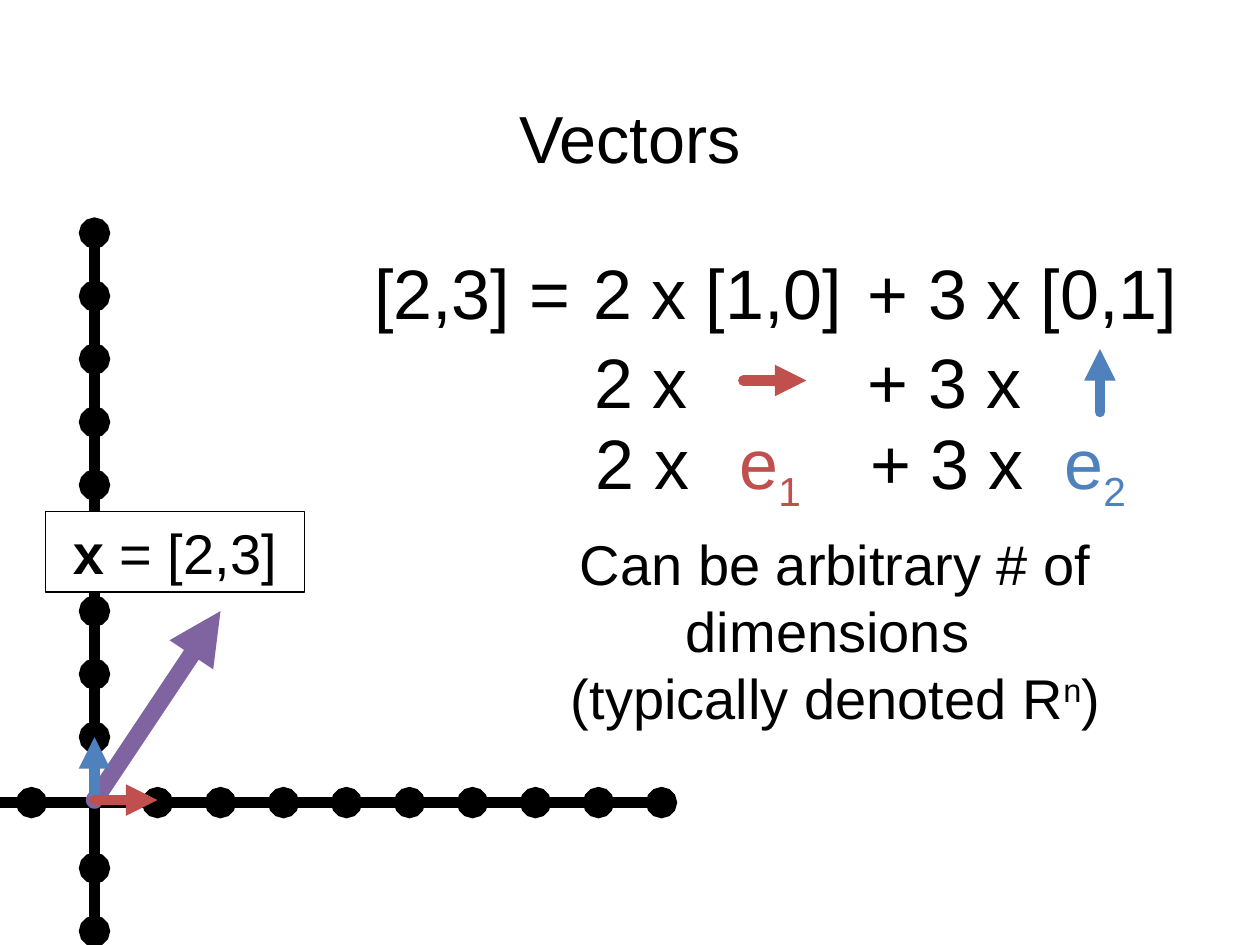
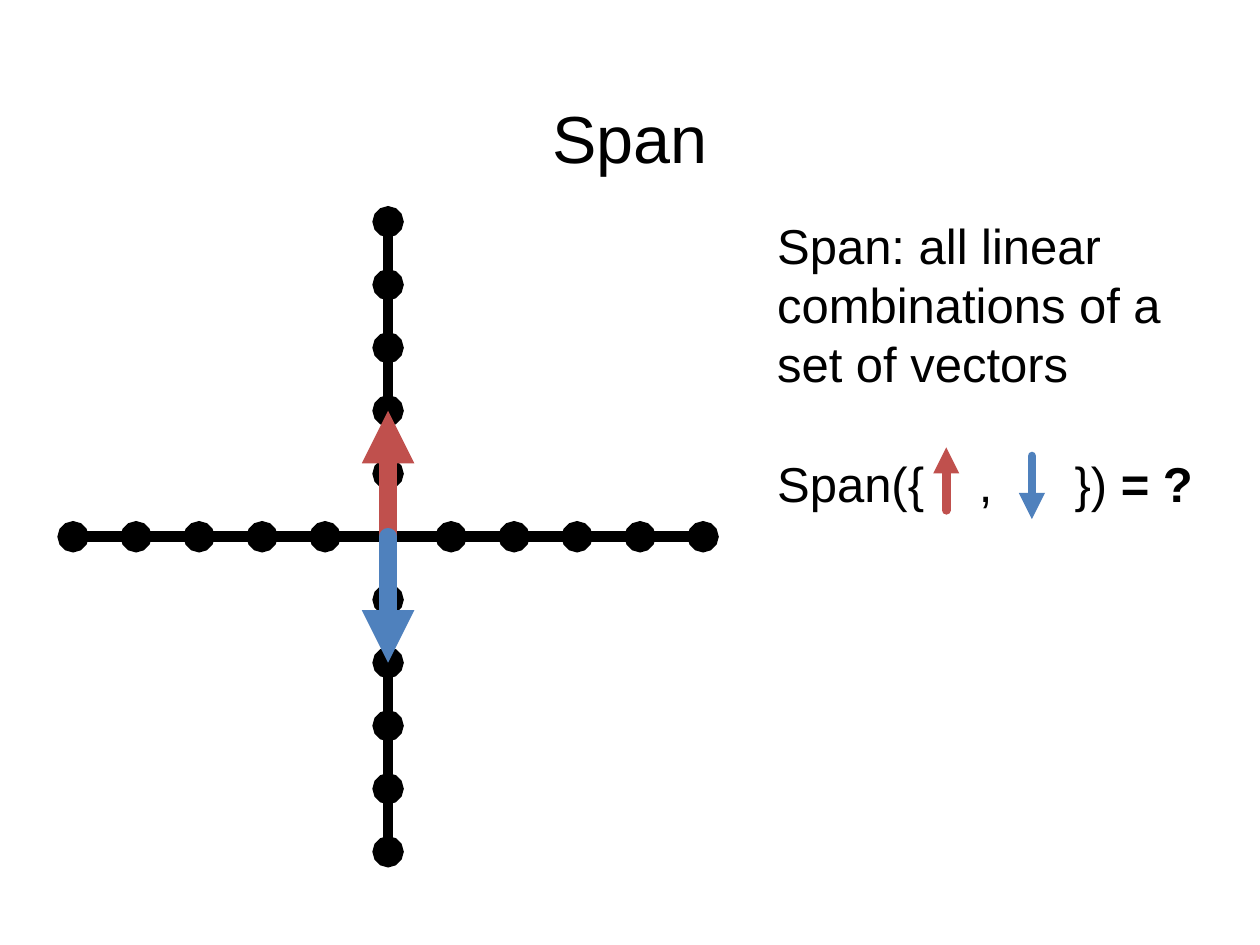
from lxml import etree
from pptx import Presentation
from pptx import util as u
from pptx.dml.color import RGBColor
from pptx.enum import shapes, text
from pptx.oxml.ns import qn

FONT = "Arial"
BLACK = RGBColor(0x00, 0x00, 0x00)
WHITE = RGBColor(0xFF, 0xFF, 0xFF)
RED = RGBColor(0xC0, 0x50, 0x4D)
BLUE = RGBColor(0x4F, 0x81, 0xBD)
PURPLE = RGBColor(0x80, 0x64, 0xA2)
LEFT, CENTER = text.PP_ALIGN.LEFT, text.PP_ALIGN.CENTER

TITLE_BOX = (0.69, 0.4, 8.62, 1.45)
UNIT = 0.5
AXIS_WIDTH = 6

# Each arm: start x, start y, direction x, direction y, number of ticks
VECTOR_AXES = [
    (0.75, 6.39, 0, 1, 2),
    (0.75, 6.37, -1, 0, 2),
    (0.75, 6.35, 0, -1, 9),
    (0.75, 6.37, 1, 0, 9),
]
SPAN_AXES = [(3.08, 4.26, dx, dy, 5)
             for dx, dy in ((-1, 0), (1, 0), (0, 1), (0, -1))]

# Each arrow: start x, start y, change in x, change in y, colour, width
VECTOR_ARROWS = [
    (0.75, 6.35, 1, -1.5, PURPLE, 10),
    (5.9, 3.02, UNIT, 0, RED, 6),
    (8.73, 3.27, 0, -UNIT, BLUE, 6),
    (0.75, 6.35, 0, -UNIT, BLUE, 6),
    (0.75, 6.35, UNIT, 0, RED, 6),
]
SPAN_ARROWS = [
    (3.08, 4.26, 0, -1, RED, 10),
    (3.08, 4.26, 0, 1, BLUE, 10),
    (7.51, 4.05, 0, -UNIT, RED, 5),
    (8.19, 3.62, 0, UNIT, BLUE, 5),
]

# Each term: left, width, then runs of text with their format
EQUATION_HEIGHT = 0.77
EQUATION_ROWS = {
    1.93: [
        (2.87, 1.88, [("[2,3] =", {})]),
        (4.61, 2.2, [("2 x [1,0]", {})]),
        (6.79, 2.68, [("+ 3 x [0,1]", {})]),
    ],
    2.64: [
        (4.62, 1.26, [("2 x", {})]),
        (6.79, 1.43, [("+ 3 x", {})]),
    ],
    3.28: [
        (4.63, 1.26, [("2 x", {})]),
        (5.77, 0.76, [("e", {"color": RED}),
                      ("1", {"color": RED, "baseline": -25})]),
        (6.81, 1.43, [("+ 3 x", {})]),
        (8.35, 0.76, [("e", {"color": BLUE}),
                      ("2", {"color": BLUE, "baseline": -25})]),
    ],
}
VECTOR_LABEL = [[("x", {"bold": True}), (" = [2,3]", {})]]
DIMENSIONS = [
    [("Can be arbitrary # of dimensions ", {})],
    [("(typically denoted R", {}), ("n", {"baseline": 30}), (")", {})],
]
SPAN_DEFINITION = [[("Span: all linear combinations of a set of vectors", {})]]
SPAN_QUESTION = [[("Span({\t,\t}) ", {}), ("= ?", {"bold": True})]]
SPAN_TABS = (1.6, 2.36)


def fill_text(sp, paragraphs, size, align=LEFT):
    tf = sp.text_frame
    tf.word_wrap = True
    for i, runs in enumerate(paragraphs):
        p = tf.paragraphs[0] if i == 0 else tf.add_paragraph()
        p.alignment = align
        for words, style in runs:
            r = p.add_run()
            r.text = words
            r.font.name = FONT
            r.font.size = u.Pt(size)
            r.font.bold = style.get("bold", False)
            r.font.color.rgb = style.get("color", BLACK)
            if "baseline" in style:
                r._r.get_or_add_rPr().set("baseline", str(style["baseline"] * 1000))
    return tf


def add_text(s, box, paragraphs, size, align=LEFT):
    sp = s.shapes.add_textbox(*map(u.Inches, box))
    return fill_text(sp, paragraphs, size, align)


def add_line(s, x, y, dx, dy, color, width, tail):
    sp = s.shapes.add_connector(shapes.MSO_CONNECTOR.STRAIGHT,
                                *map(u.Inches, (x, y, x + dx, y + dy)))
    sp.line.color.rgb = color
    sp.line.width = u.Pt(width)
    props = sp._element.spPr
    ln = props.find(qn("a:ln"))
    ln.set("cap", "rnd")
    etree.SubElement(ln, qn("a:tailEnd"), type=tail)
    etree.SubElement(props, qn("a:effectLst"))


def add_axes(s, arms):
    for x, y, dx, dy, ticks in arms:
        for n in range(1, ticks + 1):
            add_line(s, x, y, dx * n * UNIT, dy * n * UNIT, BLACK, AXIS_WIDTH, "oval")


def add_arrows(s, arrows):
    for arrow in arrows:
        add_line(s, *arrow, "triangle")


def add_slide(prs, title, axes, arrows):
    s = prs.slides.add_slide(prs.slide_layouts[6])
    tf = add_text(s, TITLE_BOX, [[(title, {})]], 38, CENTER)
    tf.vertical_anchor = text.MSO_ANCHOR.MIDDLE
    tf.paragraphs[0].line_spacing = 0.9
    add_axes(s, axes)
    add_arrows(s, arrows)
    return s


def add_vectors(prs):
    s = add_slide(prs, "Vectors", VECTOR_AXES, VECTOR_ARROWS)
    for top, terms in EQUATION_ROWS.items():
        for left, width, runs in terms:
            add_text(s, (left, top, width, EQUATION_HEIGHT), [runs], 40)
    sp = s.shapes.add_shape(shapes.MSO_SHAPE.RECTANGLE,
                            *map(u.Inches, (0.36, 4.06, 2.06, 0.64)))
    sp.shadow.inherit = False
    sp.fill.solid()
    sp.fill.fore_color.rgb = WHITE
    sp.line.color.rgb = BLACK
    sp.line.width = u.Pt(0.75)
    fill_text(sp, VECTOR_LABEL, 32, CENTER)
    add_text(s, (4.42, 4.15, 4.42, 1.72), DIMENSIONS, 32, CENTER)


def add_span(prs):
    s = add_slide(prs, "Span", SPAN_AXES, SPAN_ARROWS)
    add_text(s, (6.07, 1.66, 3.74, 1.51), SPAN_DEFINITION, 28)
    tf = add_text(s, (6.07, 3.55, 3.9, 0.57), SPAN_QUESTION, 28)
    tabs = etree.SubElement(tf.paragraphs[0]._p.get_or_add_pPr(), qn("a:tabLst"))
    for stop in SPAN_TABS:
        etree.SubElement(tabs, qn("a:tab"), pos=str(u.Inches(stop)), algn="l")


def main():
    prs = Presentation()
    prs.slide_width, prs.slide_height = u.Inches(10), u.Inches(7.5)
    add_vectors(prs)
    add_span(prs)
    prs.save("out.pptx")


if __name__ == "__main__":
    main()
